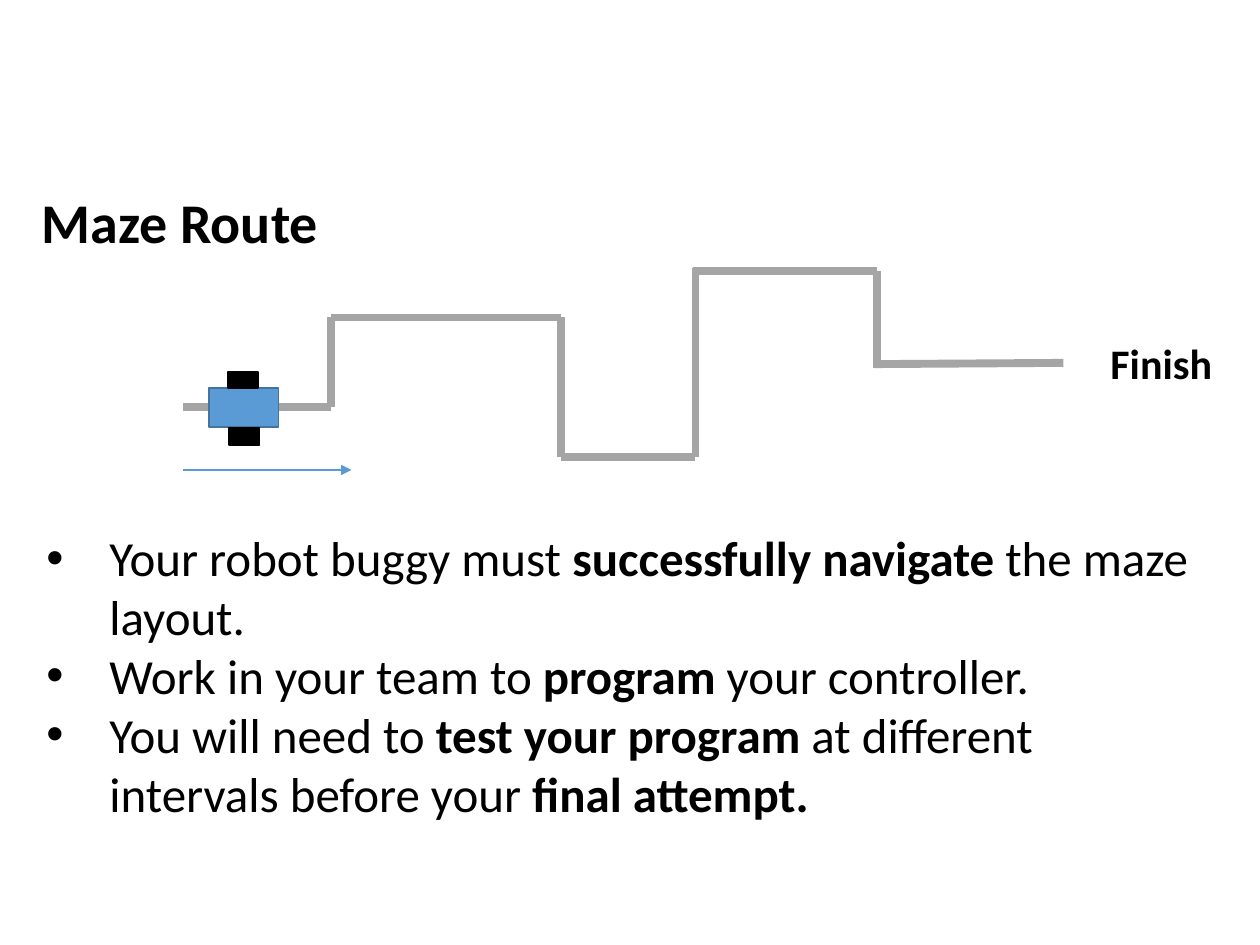
from lxml import etree
from pptx import Presentation
from pptx.dml.color import RGBColor
from pptx.enum.shapes import MSO_CONNECTOR, MSO_SHAPE
from pptx.enum.text import MSO_ANCHOR, MSO_AUTO_SIZE, PP_ALIGN
from pptx.oxml.ns import qn
from pptx.util import Inches, Pt

STRAIGHT = MSO_CONNECTOR.STRAIGHT
RECTANGLE = MSO_SHAPE.RECTANGLE
TOP = MSO_ANCHOR.TOP
FIXED_SIZE = MSO_AUTO_SIZE.NONE
LEFT, RIGHT = PP_ALIGN.LEFT, PP_ALIGN.RIGHT

BLACK = RGBColor(0x00, 0x00, 0x00)
TRACK_GREY = RGBColor(0xA5, 0xA5, 0xA5)
BUGGY_BLUE = RGBColor(0x5B, 0x9B, 0xD5)
BUGGY_EDGE = RGBColor(0x43, 0x73, 0x9E)

# Maze track: start x, start y, end x, end y
TRACK = [
    (1.45, 3.23, 2.63, 3.23),
    (2.63, 2.52, 4.45, 2.52),
    (4.45, 3.63, 5.52, 3.63),
    (5.5, 2.15, 6.96, 2.15),
    (6.94, 2.89, 8.44, 2.88),
    (5.52, 3.63, 5.52, 2.13),
    (6.96, 2.15, 6.96, 2.92),
    (4.45, 3.63, 4.45, 2.52),
    (2.63, 3.23, 2.63, 2.52),
]

# Each task is a list of (text, bold)
TASKS = [
    [("Your robot buggy must ", False), ("successfully navigate ", True),
     ("the maze layout.", False)],
    [("Work in your team to ", False), ("program", True),
     (" your controller.", False)],
    [("You will need to ", False), ("test your program ", True),
     ("at different intervals before your ", False), ("final attempt.", True)],
]


class SlideBuilder:
    font_name = "Calibri"

    def __init__(self, page):
        self.page = page

    def style(self, font, size, bold):
        font.name = self.font_name
        font.size = Pt(size)
        font.bold = bold
        font.color.rgb = BLACK

    def fill_text(self, box, text, size, align):
        frame = box.text_frame
        frame.word_wrap = True
        frame.auto_size = FIXED_SIZE
        frame.vertical_anchor = TOP
        frame.text = text
        para = frame.paragraphs[0]
        para.alignment = align
        self.style(para.runs[0].font, size, True)

    def title(self, text, left, top, width, height):
        box = self.page.shapes.title
        box.left, box.top = Inches(left), Inches(top)
        box.width, box.height = Inches(width), Inches(height)
        self.fill_text(box, text, 32, LEFT)

    def label(self, text, left, top, width, height):
        box = self.page.shapes.add_textbox(
            Inches(left), Inches(top), Inches(width), Inches(height))
        self.fill_text(box, text, 24, RIGHT)

    def bullets(self, items, left, top, width, height):
        box = self.page.shapes.add_textbox(
            Inches(left), Inches(top), Inches(width), Inches(height))
        frame = box.text_frame
        frame.word_wrap = True
        for index, item in enumerate(items):
            para = frame.add_paragraph() if index else frame.paragraphs[0]
            properties = para._p.get_or_add_pPr()
            properties.set("marL", str(Inches(0.5)))
            properties.set("indent", str(Inches(-0.5)))
            etree.SubElement(properties, qn("a:buFont"), typeface="Arial")
            etree.SubElement(properties, qn("a:buChar"), char="•")
            for text, bold in item:
                span = para.add_run()
                span.text = text
                self.style(span.font, 28, bold)

    def line(self, x1, y1, x2, y2, color, weight, arrow=False):
        line = self.page.shapes.add_connector(
            STRAIGHT, Inches(x1), Inches(y1), Inches(x2), Inches(y2))
        line.line.color.rgb = color
        line.line.width = Pt(weight)
        if arrow:
            etree.SubElement(line.line._get_or_add_ln(), qn("a:tailEnd"),
                             type="triangle")
        etree.SubElement(line._element.spPr, qn("a:effectLst"))

    def group(self):
        return self.page.shapes.add_group_shape()

    def block(self, group, left, top, width, height, fill, edge):
        block = group.shapes.add_shape(
            RECTANGLE, Inches(left), Inches(top), Inches(width), Inches(height))
        block.shadow.inherit = False
        block.fill.solid()
        block.fill.fore_color.rgb = fill
        block.line.color.rgb = edge
        block.line.width = Pt(1)


def main():
    deck = Presentation()
    deck.slide_width, deck.slide_height = Inches(10), Inches(7.5)
    title_only = deck.slide_layouts[5]
    builder = SlideBuilder(deck.slides.add_slide(title_only))

    # Heading and finish label
    builder.title("Maze Route", 0.23, 1.44, 4.04, 0.64)
    builder.label("Finish", 8.26, 2.63, 1.46, 0.5)

    # Maze track
    for segment in TRACK:
        builder.line(*segment, TRACK_GREY, 4.5)

    # Buggy: body and two wheels
    buggy = builder.group()
    builder.block(buggy, 1.66, 3.08, 0.55, 0.31, BUGGY_BLUE, BUGGY_EDGE)
    for left, top in ((1.81, 2.95), (1.82, 3.4)):
        builder.block(buggy, left, top, 0.24, 0.13, BLACK, BLACK)

    # Direction of travel
    builder.line(1.45, 3.73, 2.79, 3.73, BUGGY_BLUE, 1, arrow=True)

    # Task list
    builder.bullets(TASKS, 0.27, 4.14, 9.45, 3.87)

    deck.save("out.pptx")


if __name__ == "__main__":
    main()
